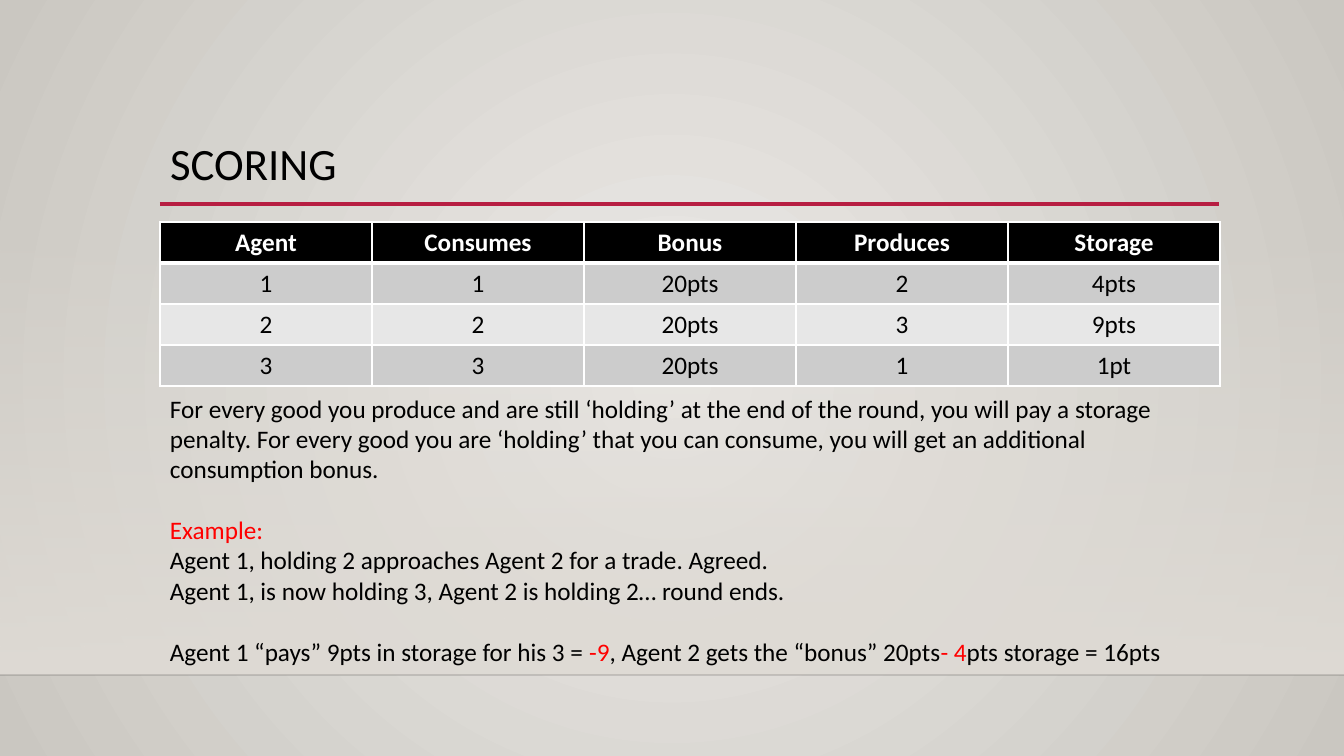
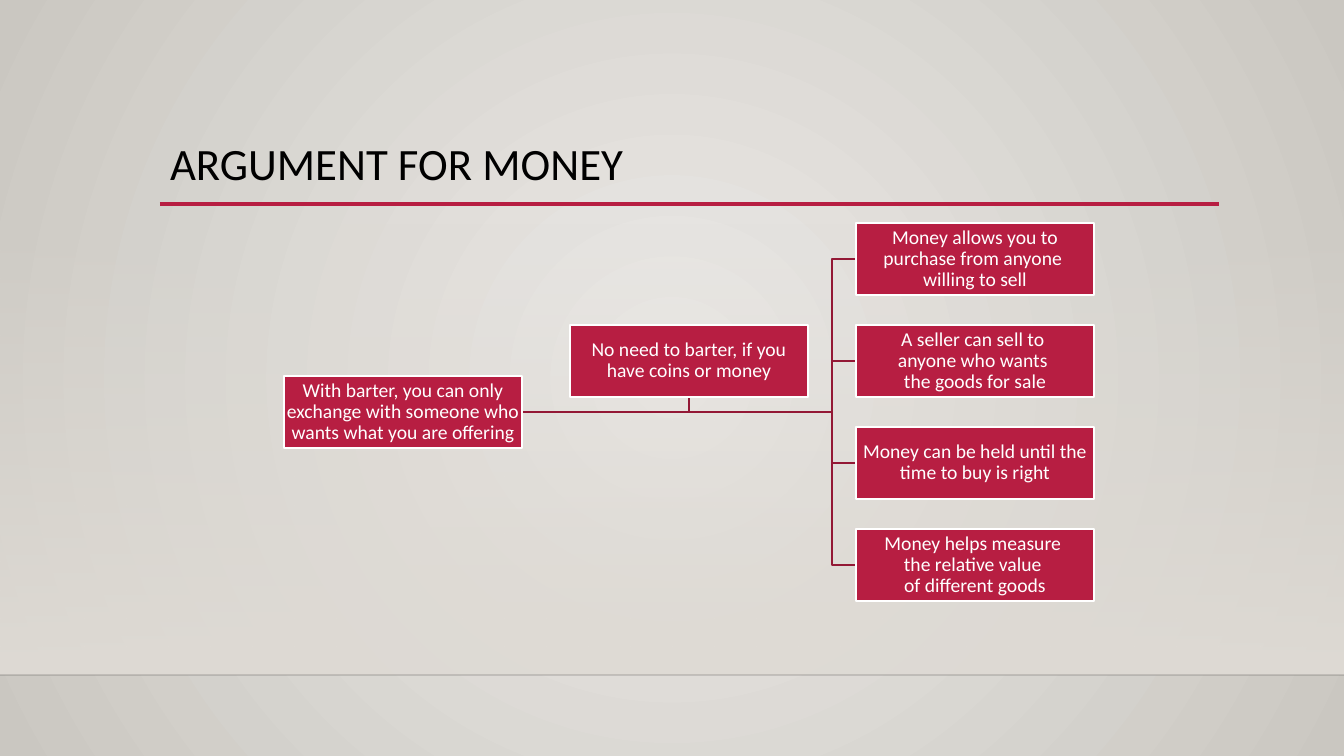
import dataclasses
import typing

import lxml.etree
import pptx
import pptx.dml.color
import pptx.enum.shapes
import pptx.enum.text
import pptx.oxml.ns
import pptx.util

# Shared look
WIDE, HIGH = 1344, 756
LEFT, SPAN = 160, 1059
FLOOR = 675
FONT = "Calibri"
BLACK, WHITE, RED = "000000", "FFFFFF", "FF0000"
ROSE, WINE = "B71E42", "931835"
BAND = "DFDBD5"
GREYS = ("E7E7E7", "CCCCCC")

ANCHOR = pptx.enum.text.MSO_ANCHOR
ALIGN = pptx.enum.text.PP_ALIGN
RECT = pptx.enum.shapes.MSO_SHAPE.RECTANGLE
qn = pptx.oxml.ns.qn


class Bit(typing.NamedTuple):
    text: str
    tint: str = BLACK


@dataclasses.dataclass
class Para:
    bits: list[Bit]
    gap: int = 0


@dataclasses.dataclass
class Box:
    text: str
    x: int
    y: int
    w: int = 238
    h: int = 72

    @property
    def mid(self) -> int:
        return self.y + self.h // 2


# Slide content
GOODS = [
    ("Agent", "Consumes", "Bonus", "Produces", "Storage"),
    ("1", "1", "20pts", "2", "4pts"),
    ("2", "2", "20pts", "3", "9pts"),
    ("3", "3", "20pts", "1", "1pt"),
]
RULES = [
    Para([Bit("For every good you produce and are still ‘holding’ at the end of the round, "
              "you will pay a storage penalty. For every good you are ‘holding’ that you "
              "can consume, you will get an additional consumption bonus.")]),
    Para([Bit("Example:", RED)], gap=22),
    Para([Bit("Agent 1, holding 2 approaches Agent 2 for a trade. Agreed.")]),
    Para([Bit("Agent 1, is now holding 3, Agent 2 is holding 2… round ends.")]),
    Para([Bit("Agent 1 “pays” 9pts in storage for his 3 = "), Bit("-9", RED),
          Bit(", Agent 2 gets the “bonus” 20pts"), Bit("- 4", RED),
          Bit("pts storage = 16pts")], gap=22),
]
ROOT = "With barter, you can only exchange with someone who wants what you are offering"
AIDE = "No need to barter, if you have coins or money"
GAINS = [
    "Money allows you to purchase from anyone \nwilling to sell",
    "A seller can sell to \nanyone who wants \nthe goods for sale",
    "Money can be held until the time to buy is right",
    "Money helps measure \nthe relative value \nof different goods",
]


# Helpers
def px(num: int) -> int:
    return round(num * 914400 / 100.8)


def place(*nums: int) -> list[int]:
    return [px(num) for num in nums]


def hue(code: str) -> pptx.dml.color.RGBColor:
    return pptx.dml.color.RGBColor.from_string(code)


def paint(shape, code: str) -> None:
    shape.fill.solid()
    shape.fill.fore_color.rgb = hue(code)


def stroke(line, code: str, width: float) -> None:
    line.color.rgb = hue(code)
    line.width = pptx.util.Pt(width)


def style(para, size: int, code: str, bold: bool = False) -> None:
    for run in para.runs:
        font = run.font
        font.name, font.size, font.bold = FONT, pptx.util.Pt(size), bold
        font.color.rgb = hue(code)


def fade(color, percent: int) -> None:
    lxml.etree.SubElement(color, qn("a:alpha"), val=str(percent * 1000))


def blend(fill, first: str, last: str) -> None:
    fill.gradient()
    for stop, code in zip(fill.gradient_stops, (first, last)):
        stop.color.rgb = hue(code)


def rule(slide, x: int, y: int, end: int, code: str, width: float):
    line = slide.shapes.add_connector(
        pptx.enum.shapes.MSO_CONNECTOR.STRAIGHT, *place(x, y, end, y))
    stroke(line.line, code, width)
    lxml.etree.SubElement(line.element.spPr, qn("a:effectLst"))
    return line


# Shared backdrop, kept on the master and the layout
def backdrop(deck, layout, slide) -> None:
    master = deck.slide_master
    blend(master.background.fill, "ECEAE7", "CAC7C1")
    grad = next(master.element.iter(qn("a:gradFill")))
    grad.remove(grad.find(qn("a:lin")))
    ring = lxml.etree.SubElement(grad, qn("a:path"), {"path": "circle"})
    half = dict.fromkeys("ltrb", "50000")
    lxml.etree.SubElement(ring, qn("a:fillToRect"), half)

    for holder in list(layout.placeholders):
        if holder.placeholder_format.type != pptx.enum.shapes.PP_PLACEHOLDER.TITLE:
            layout.shapes.element.remove(holder.element)

    band = slide.shapes.add_shape(RECT, *place(0, 223, WIDE, FLOOR - 223))
    band.shadow.inherit = False
    band.line.fill.background()
    blend(band.fill, BAND, BAND)
    band.fill.gradient_angle = 270
    fade(next(band.element.iter(qn("a:srgbClr"))), 0)

    floor = rule(slide, 0, FLOOR, WIDE, "000001", 1)
    fade(next(floor.element.iter(qn("a:srgbClr"))), 20)
    line = rule(slide, LEFT, 204, LEFT + SPAN, ROSE, 2.5)
    for spot, item in enumerate((band, floor, line), 2):
        layout.shapes.element.insert(spot, item.element)


def head(slide, text: str) -> None:
    title = slide.shapes.title
    title.left, title.top, title.width, title.height = place(LEFT, 89, SPAN, 115)
    frame = title.text_frame
    frame.text = text
    frame.word_wrap = True
    frame.auto_size = pptx.enum.text.MSO_AUTO_SIZE.NONE
    frame.vertical_anchor = ANCHOR.BOTTOM
    frame.margin_bottom = px(14)
    para = frame.paragraphs[0]
    para.alignment = ALIGN.LEFT
    para.line_spacing = 0.9
    style(para, 32, BLACK)


# Scoring slide
def edge(cell, top: int, base: int) -> None:
    props = cell._tc.get_or_add_tcPr()
    sides = (("L", 1), ("R", 1), ("T", top), ("B", base))
    for spot, (side, width) in enumerate(sides):
        line = lxml.etree.Element(qn(f"a:ln{side}"), w=str(pptx.util.Pt(width)))
        fill = lxml.etree.SubElement(line, qn("a:solidFill"))
        lxml.etree.SubElement(fill, qn("a:srgbClr"), val=WHITE)
        props.insert(spot, line)


def grid(slide, rows: list[tuple[str, ...]]) -> None:
    wide, high = 212, 41
    count = len(rows[0])
    table = slide.shapes.add_table(
        len(rows), count, *place(LEFT, 222, wide * count, high * len(rows))).table
    for col in table.columns:
        col.width = px(wide)
    for r, row in enumerate(rows):
        table.rows[r].height = px(high)
        top = r == 0
        for c, text in enumerate(row):
            cell = table.cell(r, c)
            paint(cell, BLACK if top else GREYS[r % 2])
            edge(cell, 3 if r == 1 else 1, 3 if top else 1)
            cell.vertical_anchor = ANCHOR.TOP
            para = cell.text_frame.paragraphs[0]
            para.text = text
            para.alignment = ALIGN.CENTER
            style(para, 18, WHITE if top else BLACK, top)


def prose(slide, paras: list[Para]) -> None:
    frame = slide.shapes.add_textbox(*place(LEFT, 388, SPAN, 285)).text_frame
    frame.word_wrap = True
    for i, item in enumerate(paras):
        para = frame.add_paragraph() if i else frame.paragraphs[0]
        if item.gap:
            para.space_before = pptx.util.Pt(item.gap)
        for bit in item.bits:
            para.add_run().text = bit.text
        style(para, 18, BLACK)
        for run, bit in zip(para.runs, item.bits):
            run.font.color.rgb = hue(bit.tint)


# Money slide
def link(slide, *spots: tuple[int, int]) -> None:
    first, *rest = [tuple(place(*spot)) for spot in spots]
    pen = slide.shapes.build_freeform(*first)
    pen.add_line_segments(rest, close=False)
    shape = pen.convert_to_shape()
    shape.shadow.inherit = False
    shape.fill.background()
    stroke(shape.line, WINE, 1.25)


def card(slide, box: Box) -> None:
    shape = slide.shapes.add_shape(RECT, *place(box.x, box.y, box.w, box.h))
    shape.shadow.inherit = False
    paint(shape, ROSE)
    stroke(shape.line, WHITE, 1.25)
    frame = shape.text_frame
    frame.word_wrap = True
    frame.vertical_anchor = ANCHOR.MIDDLE
    frame.margin_left = frame.margin_right = px(1)
    frame.margin_top = frame.margin_bottom = px(1)
    para = frame.paragraphs[0]
    para.text = box.text
    para.alignment = ALIGN.CENTER
    para.line_spacing = 0.9
    style(para, 14, WHITE)


def tree(slide) -> None:
    x, y, step, drop = 284, 223, 286, 102
    gains = [Box(text, x + 2 * step, y + i * drop) for i, text in enumerate(GAINS)]
    root = Box(ROOT, x, y + drop * (len(GAINS) - 1) // 2)
    aide = Box(AIDE, x + step, y + drop)
    start = (root.x + root.w, root.mid)
    stem = aide.x + aide.w // 2
    link(slide, start, (stem, root.mid), (stem, aide.y + aide.h))
    for gain in gains:
        turn = gain.x - 24
        link(slide, start, (turn, root.mid), (turn, gain.mid), (gain.x, gain.mid))
    for box in (root, *gains, aide):
        card(slide, box)


def main() -> None:
    deck = pptx.Presentation()
    deck.slide_width, deck.slide_height = place(WIDE, HIGH)
    layout = deck.slide_layouts[5]

    score = deck.slides.add_slide(layout)
    backdrop(deck, layout, score)
    head(score, "SCORING")
    grid(score, GOODS)
    prose(score, RULES)

    money = deck.slides.add_slide(layout)
    head(money, "ARGUMENT FOR MONEY")
    tree(money)
    deck.save("out.pptx")


if __name__ == "__main__":
    main()
